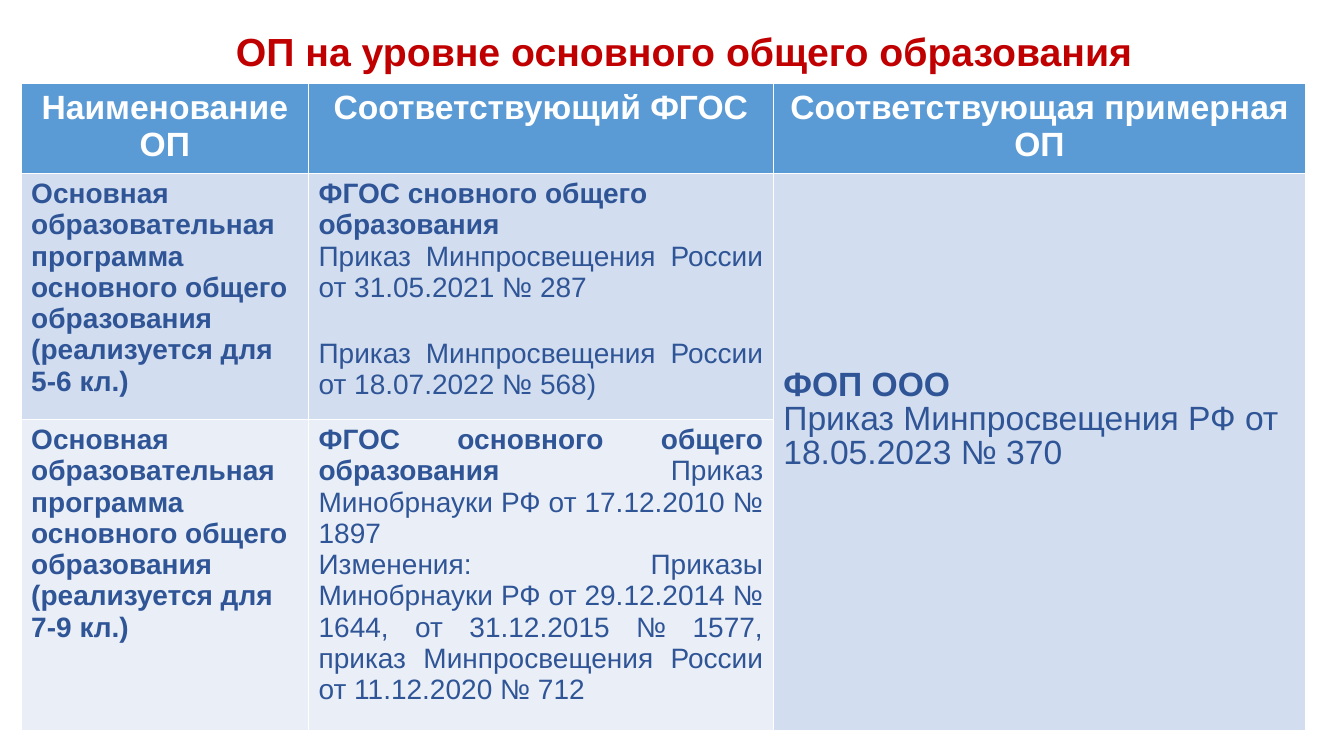
from pptx import Presentation
from pptx.dml.color import RGBColor
from pptx.enum.text import MSO_ANCHOR, MSO_AUTO_SIZE, PP_ALIGN
from pptx.util import Inches, Pt

RED = RGBColor(0xC0, 0x00, 0x00)
WHITE = RGBColor(0xFF, 0xFF, 0xFF)
NAVY = RGBColor(0x2F, 0x55, 0x97)
HEADER_BLUE = RGBColor(0x5B, 0x9B, 0xD5)
BAND_DARK = RGBColor(0xD2, 0xDE, 0xEF)
BAND_LIGHT = RGBColor(0xEA, 0xEF, 0xF7)

FONT = "Arial"
TITLE = "ОП на уровне основного общего образования"
HEADERS = ["Наименование ОП", "Соответствующий ФГОС", "Соответствующая примерная ОП"]
PROGRAM = "Основная образовательная программа основного общего образования"
COLUMN_WIDTHS = [2.85, 4.61, 5.28]
ROW_HEIGHTS = [0.89, 2.44, 3.09]

# Each paragraph is a list of (text, bold) runs
STANDARD_2021 = [
    [("ФГОС сновного общего образования", True)],
    [("Приказ Минпросвещения России от 31.05.2021 № 287", False)],
    [("Приказ Минпросвещения России от 18.07.2022 № 568)", False)],
]
STANDARD_2010 = [
    [("ФГОС основного общего образования ", True),
     ("Приказ Минобрнауки РФ от 17.12.2010 № 1897 ", False)],
    [("Изменения: Приказы Минобрнауки РФ от 29.12.2014 № 1644, "
      "от 31.12.2015 № 1577, приказ Минпросвещения России "
      "от 11.12.2020 № 712", False)],
]
FEDERAL_PROGRAM = [
    [("ФОП ООО", True)],
    [("Приказ Минпросвещения РФ от 18.05.2023 № 370", False)],
]


def program_text(grades):
    return [[(PROGRAM, True)], [(f"(реализуется для {grades} кл.)", True)]]


def style_paragraph(paragraph, size, color, alignment):
    paragraph.alignment = alignment
    paragraph.font.name = FONT
    paragraph.font.size = Pt(size)
    paragraph.font.color.rgb = color


def fill_cell(cell, paragraphs, fill, size=20, color=NAVY, alignment=PP_ALIGN.LEFT):
    cell.fill.solid()
    cell.fill.fore_color.rgb = fill
    frame = cell.text_frame
    for index, runs in enumerate(paragraphs):
        paragraph = frame.add_paragraph() if index else frame.paragraphs[0]
        style_paragraph(paragraph, size, color, alignment)
        for text, bold in runs:
            run = paragraph.add_run()
            run.text = text
            run.font.bold = bold
    return frame.paragraphs


def add_title(slide, left, top, width, height):
    title = slide.shapes.title
    title.left, title.top = Inches(left), Inches(top)
    title.width, title.height = Inches(width), Inches(height)
    frame = title.text_frame
    frame.text = TITLE
    frame.auto_size = MSO_AUTO_SIZE.NONE
    frame.vertical_anchor = MSO_ANCHOR.MIDDLE
    style_paragraph(frame.paragraphs[0], 28, RED, PP_ALIGN.CENTER)
    frame.paragraphs[0].font.bold = True


def add_programs_table(slide, left, top):
    table = slide.shapes.add_table(
        len(ROW_HEIGHTS), len(COLUMN_WIDTHS), Inches(left), Inches(top),
        Inches(sum(COLUMN_WIDTHS)), Inches(sum(ROW_HEIGHTS))).table
    for column, width in zip(table.columns, COLUMN_WIDTHS):
        column.width = Inches(width)
    for row, height in zip(table.rows, ROW_HEIGHTS):
        row.height = Inches(height)

    # Header row
    for index, header in enumerate(HEADERS):
        fill_cell(table.cell(0, index), [[(header, True)]], HEADER_BLUE,
                  24, WHITE, PP_ALIGN.CENTER)

    # Programs and their standards
    fill_cell(table.cell(1, 0), program_text("5-6"), BAND_DARK)
    fill_cell(table.cell(2, 0), program_text("7-9"), BAND_LIGHT)
    orders = fill_cell(table.cell(1, 1), STANDARD_2021, BAND_DARK,
                       alignment=PP_ALIGN.JUSTIFY)
    orders[0].alignment = PP_ALIGN.LEFT
    orders[-1].space_before = Pt(25)
    fill_cell(table.cell(2, 1), STANDARD_2010, BAND_LIGHT, alignment=PP_ALIGN.JUSTIFY)

    # Federal program shared by both rows
    shared = table.cell(1, 2)
    shared.merge(table.cell(2, 2))
    shared.vertical_anchor = MSO_ANCHOR.MIDDLE
    shared.margin_bottom = Inches(0.68)
    for paragraph in fill_cell(shared, FEDERAL_PROGRAM, BAND_DARK, 24):
        paragraph.line_spacing = 0.9


def main():
    presentation = Presentation()
    presentation.slide_width = Inches(13.33)
    presentation.slide_height = Inches(7.5)
    slide = presentation.slides.add_slide(presentation.slide_layouts[5])
    add_title(slide, 0.46, 0.2, 12.65, 0.6)
    add_programs_table(slide, 0.21, 0.83)
    presentation.save("out.pptx")


if __name__ == "__main__":
    main()
